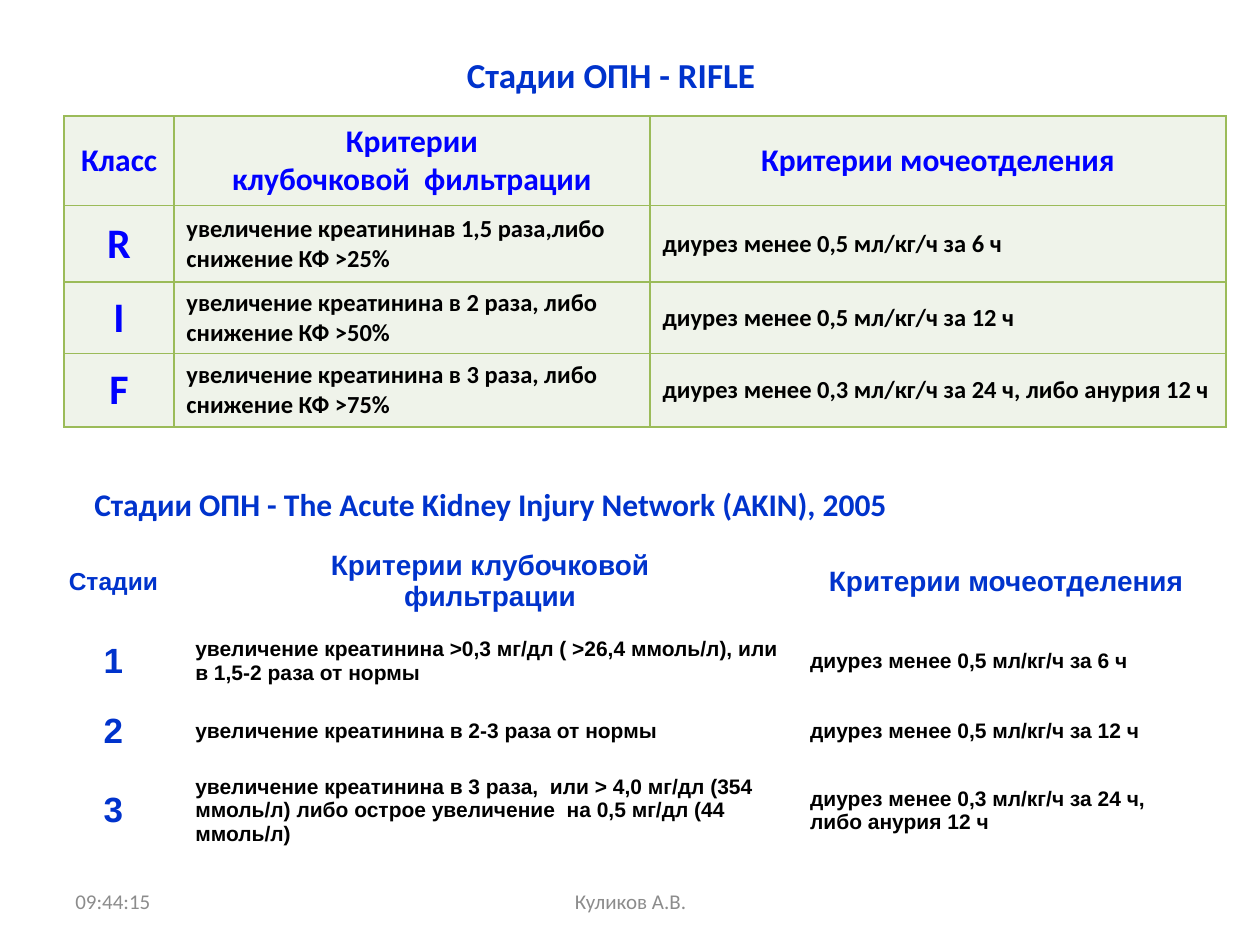
import pptx
import pptx.dml.color
import pptx.enum.text
import pptx.oxml
import pptx.oxml.ns
import pptx.util
from pptx.util import Inches

RGBColor = pptx.dml.color.RGBColor
TITLE_BLUE = RGBColor(0x00, 0x33, 0xCC)
RIFLE_BLUE = RGBColor(0x00, 0x00, 0xFF)
BLACK = RGBColor(0x00, 0x00, 0x00)
FOOTER_GRAY = RGBColor(0x8C, 0x8C, 0x8C)
CELL_GREEN = RGBColor(0xEF, 0xF3, 0xEA)
BORDER_GREEN = RGBColor(0x9B, 0xBB, 0x59)

LEFT = pptx.enum.text.PP_ALIGN.LEFT
CENTER = pptx.enum.text.PP_ALIGN.CENTER
MIDDLE = pptx.enum.text.MSO_ANCHOR.MIDDLE
TOP = pptx.enum.text.MSO_ANCHOR.TOP

RIFLE_ROWS = [
    ["Класс", "Критерии\n клубочковой  фильтрации ", "Критерии мочеотделения"],
    ["R", "увеличение креатининав 1,5 раза,либо снижение КФ >25%",
     "диурез менее 0,5 мл/кг/ч за 6 ч"],
    ["I", "увеличение креатинина в 2 раза, либо снижение КФ >50%",
     "диурез менее 0,5 мл/кг/ч за 12 ч"],
    ["F", "увеличение креатинина в 3 раза, либо снижение КФ >75%",
     "диурез менее 0,3 мл/кг/ч за 24 ч, либо анурия 12 ч"],
]
AKIN_ROWS = [
    ["Стадии", "Критерии клубочковой\n фильтрации ", "Критерии мочеотделения"],
    ["1", "увеличение креатинина >0,3 мг/дл ( >26,4 ммоль/л), или "
     "в 1,5-2 раза от нормы", "диурез менее 0,5 мл/кг/ч за 6 ч"],
    ["2", "увеличение креатинина в 2-3 раза от нормы",
     "диурез менее 0,5 мл/кг/ч за 12 ч"],
    ["3", "увеличение креатинина в 3 раза,  или > 4,0 мг/дл (354\n"
     "ммоль/л) либо острое увеличение  на 0,5 мг/дл (44  ммоль/л)",
     "диурез менее 0,3 мл/кг/ч за 24 ч, либо анурия 12 ч"],
]


def write_text(text_frame, text, size, color, font="Calibri", bold=True, align=LEFT):
    text_frame.text = text
    for paragraph in text_frame.paragraphs:
        paragraph.alignment = align
        paragraph.font.name = font
        paragraph.font.size = pptx.util.Pt(size)
        paragraph.font.bold = bold
        paragraph.font.color.rgb = color


def add_label(slide, box, text, size, color, anchor=MIDDLE, margin_top=0.05, **style):
    shape = slide.shapes.add_textbox(*map(Inches, box))
    text_frame = shape.text_frame
    text_frame.word_wrap = True
    text_frame.vertical_anchor = anchor
    text_frame.margin_top = Inches(margin_top)
    write_text(text_frame, text, size, color, **style)


def set_borders(cell, color):
    properties = cell._tc.get_or_add_tcPr()
    for position, side in enumerate(("lnL", "lnR", "lnT", "lnB")):
        line = pptx.oxml.parse_xml(
            f'<a:{side} {pptx.oxml.ns.nsdecls("a")} w="12700"><a:solidFill>'
            f'<a:srgbClr val="{color}"/></a:solidFill></a:{side}>')
        properties.insert(position, line)


def add_criteria_table(slide, left, top, widths, heights, rows, font, accent,
                       header_sizes, class_size, body_size, fill=None, border=None):
    """Centred accent text fills the header row and first column; the rest is black."""
    frame = slide.shapes.add_table(
        len(rows), len(widths), Inches(left), Inches(top),
        Inches(sum(widths)), Inches(sum(heights)))
    table = frame.table
    table.first_row = False
    table.horz_banding = False
    for column, width in zip(table.columns, widths):
        column.width = Inches(width)
    for row, height in zip(table.rows, heights):
        row.height = Inches(height)
    for row_index, texts in enumerate(rows):
        for column_index, text in enumerate(texts):
            cell = table.cell(row_index, column_index)
            cell.vertical_anchor = MIDDLE
            if row_index == 0:
                size, color, align = header_sizes[column_index], accent, CENTER
            elif column_index == 0:
                size, color, align = class_size, accent, CENTER
            else:
                size, color, align = body_size, BLACK, LEFT
            write_text(cell.text_frame, text, size, color, font=font, align=align)
            if fill is None:
                cell.fill.background()
            else:
                cell.fill.solid()
                cell.fill.fore_color.rgb = fill
            if border is not None:
                set_borders(cell, border)


def main():
    presentation = pptx.Presentation()
    presentation.slide_width = Inches(10)
    presentation.slide_height = Inches(7.5)
    slide = presentation.slides.add_slide(presentation.slide_layouts[6])

    add_label(slide, (0.35, 0.29, 9, 0.61), "Стадии ОПН - RIFLE", 20, TITLE_BLUE,
              align=CENTER)
    add_criteria_table(
        slide, 0.51, 0.92, (0.87, 3.78, 4.57), (0.71, 0.61, 0.56, 0.58), RIFLE_ROWS,
        "Calibri", RIFLE_BLUE, header_sizes=(18, 18, 18), class_size=24, body_size=14,
        fill=CELL_GREEN, border=BORDER_GREEN)

    add_label(slide, (0.65, 3.62, 8.66, 0.64),
              "Стадии ОПН - The Acute Kidney Injury Network (AKIN), 2005",
              18, TITLE_BLUE, anchor=TOP, margin_top=0.23)
    add_criteria_table(
        slide, 0.35, 4.3, (1.1, 4.88, 3.31), (0.59, 0.63, 0.48, 0.78), AKIN_ROWS,
        "Arial", TITLE_BLUE, header_sizes=(14, 16, 16), class_size=20, body_size=12)

    add_label(slide, (0.5, 6.95, 2.33, 0.4), "09:44:15", 12, FOOTER_GRAY, bold=False)
    add_label(slide, (3.42, 6.95, 3.17, 0.4), "Куликов А.В.", 12, FOOTER_GRAY,
              bold=False, align=CENTER)
    presentation.save("out.pptx")


if __name__ == "__main__":
    main()
